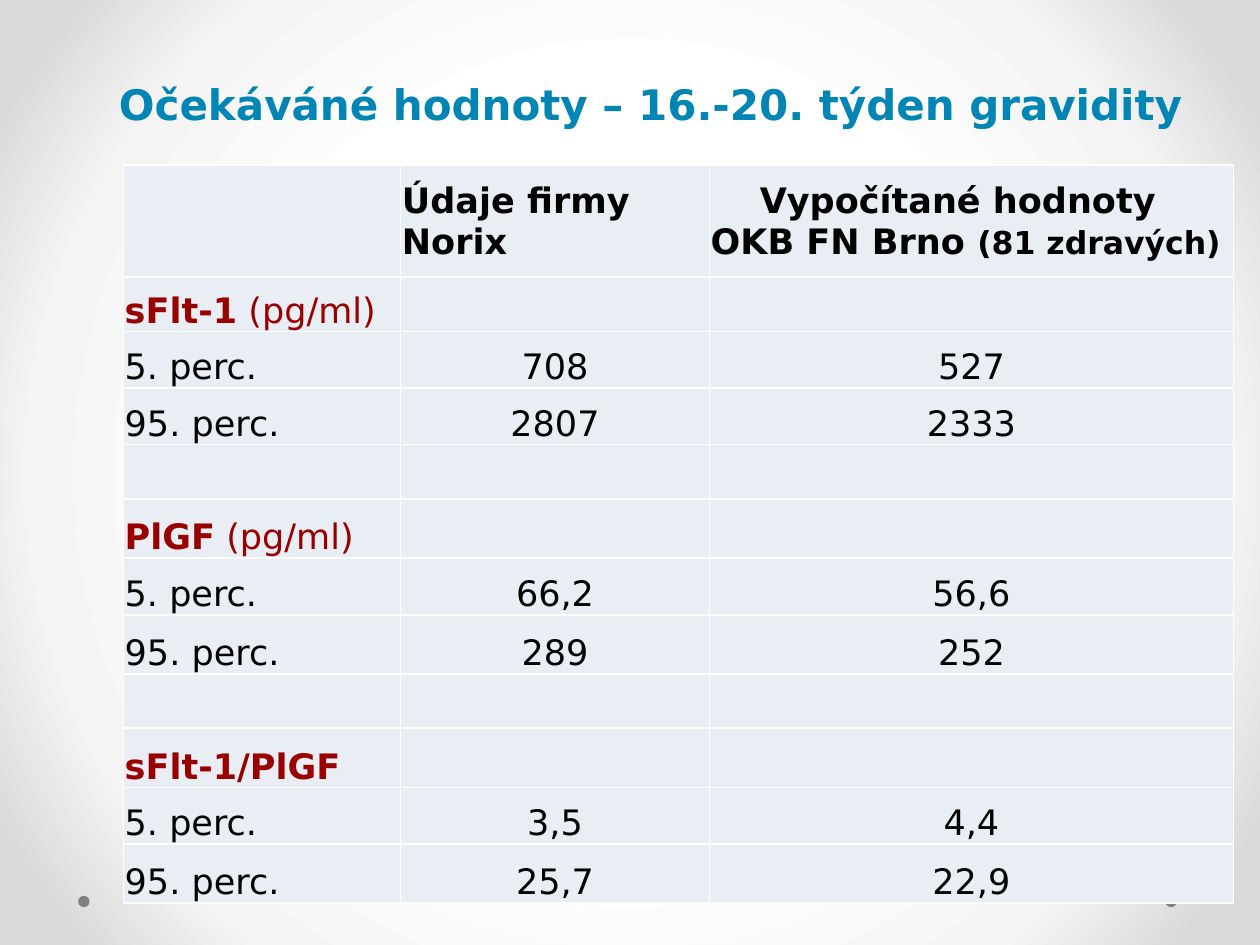
from lxml.etree import SubElement
from pptx import Presentation
from pptx.dml.color import RGBColor
from pptx.enum.shapes import MSO_SHAPE
from pptx.enum.text import MSO_ANCHOR, PP_ALIGN
from pptx.oxml.ns import qn
from pptx.util import Inches, Pt

BLUE = RGBColor(0x00, 0x85, 0xB4)
RED = RGBColor(0x99, 0x00, 0x00)
BLACK = RGBColor(0x00, 0x00, 0x00)
WHITE = RGBColor(0xFF, 0xFF, 0xFF)
GREY = RGBColor(0x80, 0x80, 0x80)
CELL_FILL = RGBColor(0xE9, 0xED, 0xF4)
GRADIENT = [(50, WHITE), (76, RGBColor(0xF4, 0xF4, 0xF4)), (92, RGBColor(0xDA, 0xDA, 0xDA))]

COLUMNS = [2.2, 2.45, 4.16]
ROWS = [0.89, 0.43, 0.45, 0.45, 0.43, 0.47, 0.45, 0.47, 0.43, 0.47, 0.45, 0.47]
# Each group: name, unit, then the 5th and 95th percentile of both sources
GROUPS = [
    ("sFlt-1", " (pg/ml)", ("708", "527"), ("2807", "2333")),
    ("PlGF", " (pg/ml)", ("66,2", "56,6"), ("289", "252")),
    ("sFlt-1/PlGF", "", ("3,5", "4,4"), ("25,7", "22,9")),
]
GROUP_STEP = 4


def add_span(para, text, size=20, color=BLACK, bold=False):
    span = para.add_run()
    span.text = text
    span.font.name = "DejaVu Sans"
    span.font.size = Pt(size)
    span.font.bold = bold
    span.font.color.rgb = color


def start_cell(cell, anchor=MSO_ANCHOR.BOTTOM, align=PP_ALIGN.LEFT):
    """Set the margins and anchor of a cell and return its first paragraph."""
    cell.margin_left = cell.margin_right = cell.margin_top = Inches(0.01)
    cell.margin_bottom = 0
    cell.vertical_anchor = anchor
    para = cell.text_frame.paragraphs[0]
    para.alignment = align
    return para


deck = Presentation()
deck.slide_width, deck.slide_height = Inches(10), Inches(7.5)
page = deck.slides.add_slide(deck.slide_layouts[6])

# Radial background
page.background.fill.gradient()
gradient = page.element.find(".//" + qn("a:gradFill"))
for child in list(gradient):
    gradient.remove(child)
stops = SubElement(gradient, qn("a:gsLst"))
for position, color in GRADIENT:
    stop = SubElement(stops, qn("a:gs"), pos=str(position * 1000))
    SubElement(stop, qn("a:srgbClr"), val=str(color))
circle = SubElement(gradient, qn("a:path"), path="circle")
SubElement(circle, qn("a:fillToRect"), l="50000", t="50000", r="50000", b="50000")

# Corner dots
for left in (9.25, 0.62):
    dot = page.shapes.add_shape(
        MSO_SHAPE.OVAL, Inches(left), Inches(7.11), Inches(0.09), Inches(0.09))
    dot.shadow.inherit = False
    dot.fill.solid()
    dot.fill.fore_color.rgb = GREY
    dot.line.fill.background()

# Title
title = page.shapes.add_textbox(Inches(0.75), Inches(0.13), Inches(8.83), Inches(0.94))
title.text_frame.word_wrap = True
title.text_frame.vertical_anchor = MSO_ANCHOR.BOTTOM
para = title.text_frame.paragraphs[0]
para.alignment = PP_ALIGN.CENTER
para.line_spacing = Pt(58)
add_span(para, "Očekáváné hodnoty – 16.-20. týden gravidity", 24, BLUE, True)

# Table grid
table = page.shapes.add_table(
    len(ROWS), len(COLUMNS), Inches(0.98), Inches(1.31),
    Inches(sum(COLUMNS)), Inches(sum(ROWS))).table
table.first_row = table.horz_banding = False
for column, width in zip(table.columns, COLUMNS):
    column.width = Inches(width)
for row, height in zip(table.rows, ROWS):
    row.height = Inches(height)
for cell in table.iter_cells():
    properties = cell._tc.get_or_add_tcPr()
    for side in ("a:lnL", "a:lnR", "a:lnT", "a:lnB"):
        border = SubElement(properties, qn(side), w=str(Pt(1)))
        SubElement(SubElement(border, qn("a:solidFill")), qn("a:srgbClr"), val=str(WHITE))
    cell.fill.solid()
    cell.fill.fore_color.rgb = CELL_FILL

# Header row
para = start_cell(table.cell(0, 1), MSO_ANCHOR.MIDDLE)
add_span(para, "Údaje firmy Norix", bold=True)
para = start_cell(table.cell(0, 2), MSO_ANCHOR.MIDDLE)
para._p.get_or_add_pPr().set("marL", str(Inches(0.39)))
add_span(para, "Vypočítané hodnoty", bold=True)
para = table.cell(0, 2).text_frame.add_paragraph()
add_span(para, "OKB FN Brno ", bold=True)
add_span(para, "(81 zdravých)", 18, bold=True)

# Groups of percentiles
for index, (name, unit, *percentiles) in enumerate(GROUPS):
    top = 1 + index * GROUP_STEP
    para = start_cell(table.cell(top, 0))
    add_span(para, name, color=RED, bold=True)
    if unit:
        add_span(para, unit, color=RED)
    for offset, (label, values) in enumerate(zip(("5. perc.", "95. perc."), percentiles), 1):
        add_span(start_cell(table.cell(top + offset, 0)), label)
        for column, value in enumerate(values, 1):
            add_span(start_cell(table.cell(top + offset, column), align=PP_ALIGN.CENTER), value)

deck.save("out.pptx")
